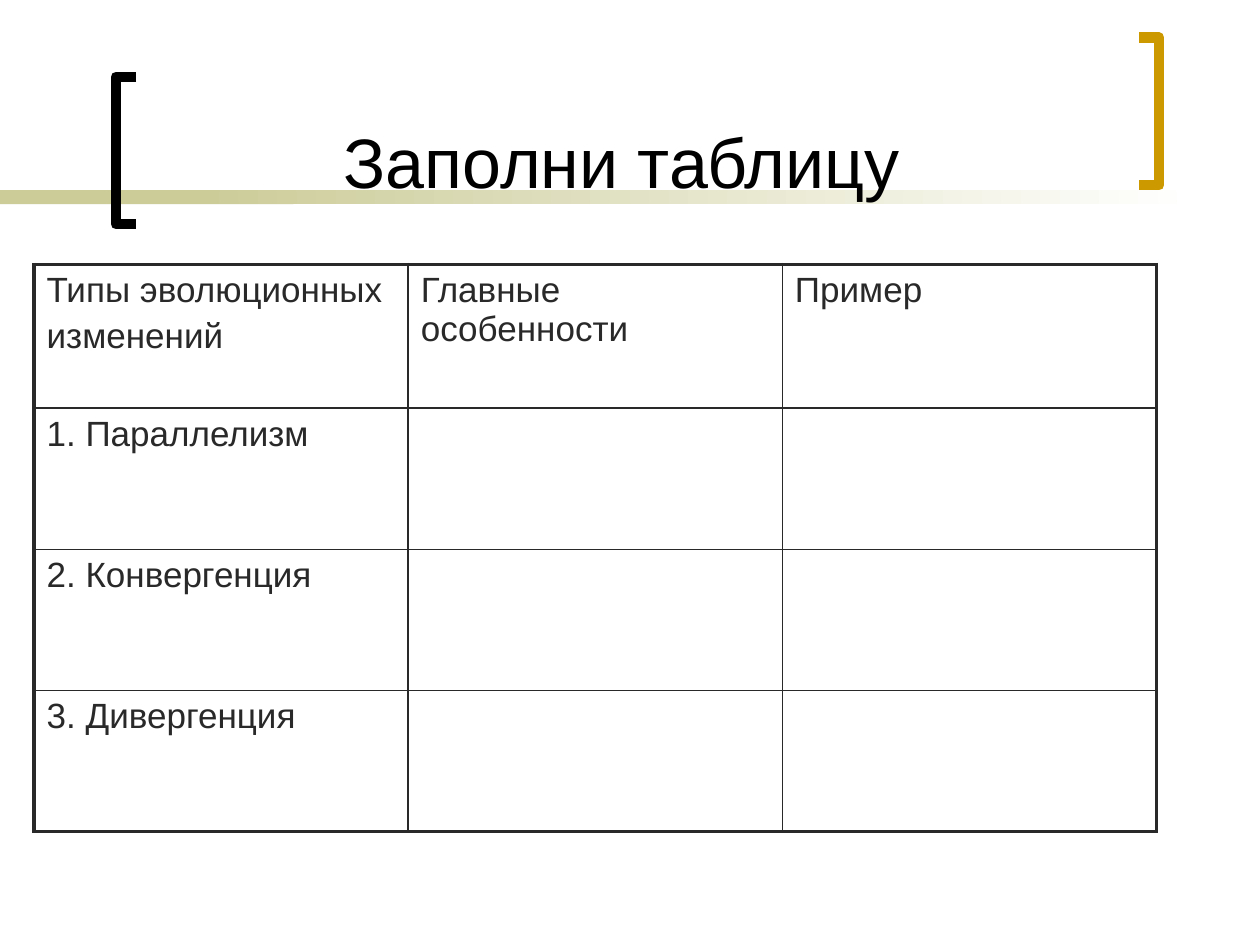
from lxml.etree import SubElement
from pptx import Presentation
from pptx.dml.color import RGBColor
from pptx.enum.shapes import MSO_SHAPE
from pptx.enum.text import MSO_ANCHOR, PP_ALIGN
from pptx.oxml.ns import qn
from pptx.util import Inches, Pt

INK = "292929"
SAND = "CCCC99"


def color(hex_string):
    return RGBColor.from_string(hex_string)


def add_border(cell, side, width):
    line = SubElement(cell._tc.get_or_add_tcPr(), qn(f"a:ln{side}"), w=str(Pt(width)))
    SubElement(SubElement(line, qn("a:solidFill")), qn("a:srgbClr"), val=INK)


presentation = Presentation()
presentation.slide_width = Inches(10)
presentation.slide_height = Inches(7.5)
slide = presentation.slides.add_slide(presentation.slide_layouts[6])

# Band under the title: a solid part, then a fade to white
for left, width, fades in [(0, 2.33, False), (1.58, 7.92, True)]:
    band = slide.shapes.add_shape(
        MSO_SHAPE.RECTANGLE, Inches(left), Inches(1.51), Inches(width), Inches(0.11))
    band.shadow.inherit = False
    band.line.fill.background()
    if fades:
        band.fill.gradient()
        band.fill.gradient_angle = 0
        for stop, shade, position in zip(band.fill.gradient_stops, (SAND, "FFFFFF"), (0, 1)):
            stop.color.rgb = color(shade)
            stop.position = position
    else:
        band.fill.solid()
        band.fill.fore_color.rgb = color(SAND)

# Square brackets around the title: tips, spine, top, colour
for tip, spine, top, shade in [(1.08, 0.92, 0.61, "000000"), (9.04, 9.2, 0.3, "CC9900")]:
    bottom = top + 1.17
    builder = slide.shapes.build_freeform(Inches(tip), Inches(top), scale=1.0)
    corners = [(spine, top), (spine, bottom), (tip, bottom)]
    builder.add_line_segments([(Inches(x), Inches(y)) for x, y in corners], close=False)
    bracket = builder.convert_to_shape()
    bracket.shadow.inherit = False
    bracket.fill.background()
    bracket.line.color.rgb = color(shade)
    bracket.line.width = Pt(6)

# Title
title = slide.shapes.add_textbox(Inches(1.02), Inches(0.11), Inches(7.83), Inches(1.55))
title.text_frame.word_wrap = True
title.text_frame.vertical_anchor = MSO_ANCHOR.BOTTOM
title.text_frame.text = "Заполни таблицу"
paragraph = title.text_frame.paragraphs[0]
paragraph.alignment = PP_ALIGN.CENTER
paragraph.font.size = Pt(40)
paragraph.font.name = "Arial"
paragraph.font.color.rgb = color("000000")

# Table: thick outer frame, thin inner lines
rows = [
    ["Типы эволюционных\nизменений", "Главные особенности", "Пример"],
    ["1. Параллелизм", "", ""],
    ["2. Конвергенция", "", ""],
    ["3. Дивергенция", "", ""],
]
last_row, last_column = len(rows) - 1, len(rows[0]) - 1
table = slide.shapes.add_table(
    len(rows), len(rows[0]), Inches(0.27), Inches(2.1), Inches(8.9), Inches(4.5)).table
table.first_row = False
table.horz_banding = False
for column in table.columns:
    column.width = Inches(2.97)
for index, row in enumerate(table.rows):
    row.height = Inches(1.12 if index else 1.14)

for r, texts in enumerate(rows):
    for c, text in enumerate(texts):
        cell = table.cell(r, c)
        cell.text_frame.text = text
        for paragraph in cell.text_frame.paragraphs:
            paragraph.space_before = Pt(4)
            paragraph.font.size = Pt(20)
            paragraph.font.name = "Arial"
            paragraph.font.color.rgb = color(INK)
        outer_sides = {"L": c == 0, "R": c == last_column, "T": r == 0, "B": r == last_row}
        for side, is_outer in outer_sides.items():
            add_border(cell, side, 2.25 if is_outer else 1)
        cell.fill.background()

presentation.save("out.pptx")
